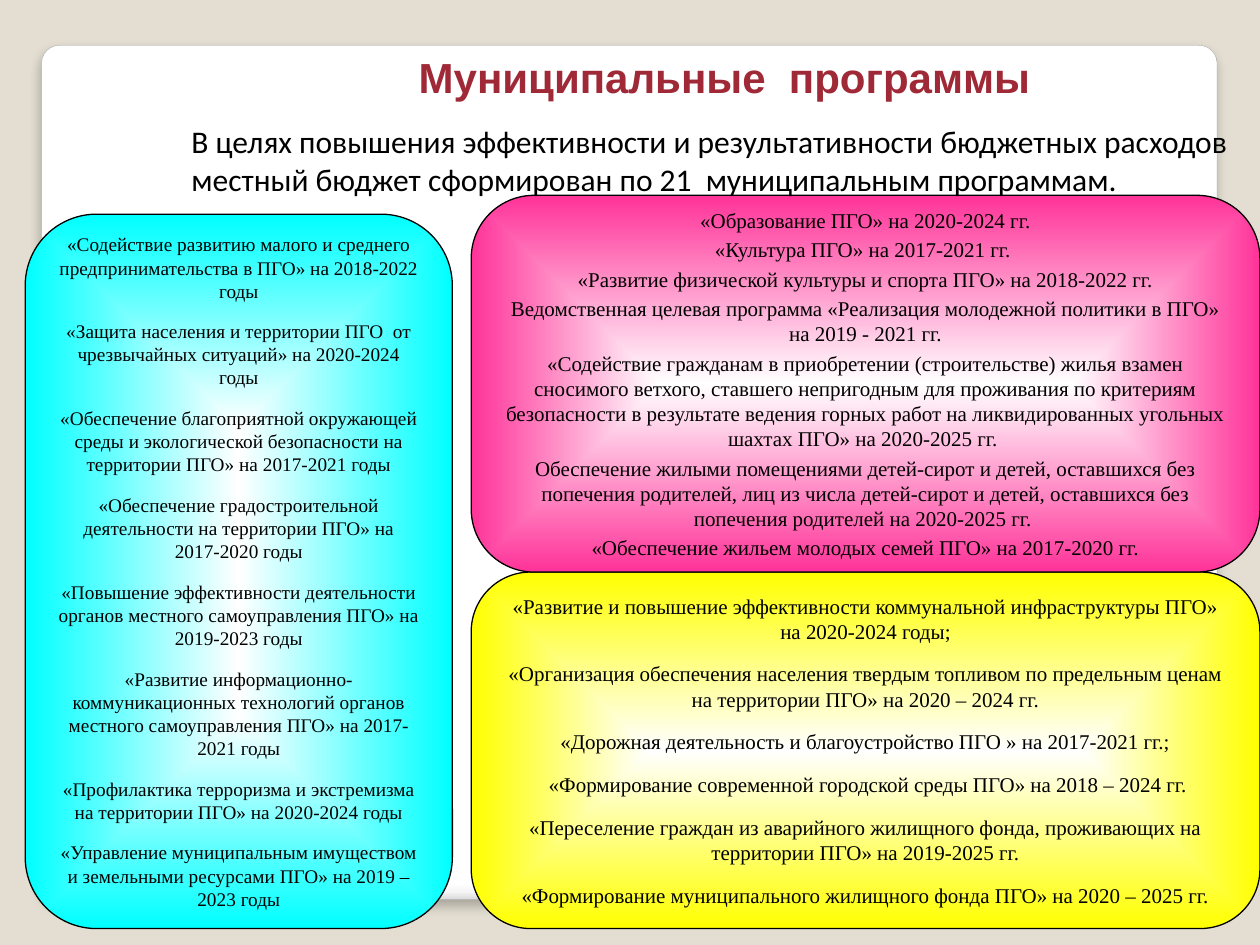
from dataclasses import dataclass

from lxml import etree
from pptx import Presentation
from pptx.dml.color import RGBColor
from pptx.enum import shapes, text
from pptx.oxml import parse_xml
from pptx.oxml.ns import nsdecls, qn
from pptx.util import Inches, Pt

COLOURS = {
    "background": "E3DED1", "white": "FFFFFF", "black": "000000",
    "card_line": "A4A4A4", "card_edge": "F7F7F7", "card_rim": "DADADA",
    "title": "9F2936", "yellow": "FFFF00", "pink": "FF3399", "cyan": "00FFFF",
}


@dataclass
class Box:
    left: float
    top: float
    width: float
    height: float


@dataclass
class Panel:
    box: Box
    colour: str
    size: float
    spacing: dict
    programs: list


def rgb(name: str) -> RGBColor:
    return RGBColor.from_string(COLOURS[name])


def lengths(box: Box) -> list:
    return [Inches(v) for v in (box.left, box.top, box.width, box.height)]


def set_values(target, values: dict) -> None:
    for name, value in values.items():
        setattr(target, name, value)


def set_gradient(shape, stops: list, direction: str) -> None:
    """Replace the fill with a gradient of (position in percent, colour) stops."""
    shape.fill.background()
    stop_xml = "".join(
        f'<a:gs pos="{position * 1000}"><a:srgbClr val="{COLOURS[colour]}"/></a:gs>'
        for position, colour in stops)
    gradient = parse_xml(f'<a:gradFill {nsdecls("a")} rotWithShape="1">'
                         f'<a:gsLst>{stop_xml}</a:gsLst>{direction}</a:gradFill>')
    properties = shape._element.spPr
    properties.replace(properties.find(qn("a:noFill")), gradient)


def add_rounded(slide, box: Box, corner: float, line: str, width: float):
    shape = slide.shapes.add_shape(shapes.MSO_SHAPE.ROUNDED_RECTANGLE, *lengths(box))
    shape.adjustments[0] = corner
    shape.shadow.inherit = False
    shape.line.color.rgb = rgb(line)
    shape.line.width = Pt(width)
    return shape


def write(frame, lines: list, font: dict, colour: str, paragraph_format: dict) -> None:
    for index, line in enumerate(lines):
        paragraph = frame.add_paragraph() if index else frame.paragraphs[0]
        set_values(paragraph, paragraph_format)
        run = paragraph.add_run()
        run.text = line
        set_values(run.font, font)
        run.font.color.rgb = rgb(colour)


def add_card(slide, box: Box) -> None:
    card = add_rounded(slide, box, 0.021, "card_line", 0.16)
    set_gradient(card, [(0, "white"), (98, "white"), (99, "card_edge"), (100, "card_rim")],
                 '<a:lin ang="5400000" scaled="0"/>')
    effects = card._element.spPr.find(qn("a:effectLst"))
    shadow = etree.SubElement(effects, qn("a:outerShdw"), blurRad=str(Pt(6)),
                              dist=str(Pt(4)), dir="5400000", rotWithShape="0")
    colour = etree.SubElement(shadow, qn("a:srgbClr"), val=COLOURS["black"])
    etree.SubElement(colour, qn("a:alpha"), val="25000")


def add_panel(slide, panel: Panel) -> None:
    shape = add_rounded(slide, panel.box, 0.167, "black", 0.75)
    set_gradient(shape, [(0, "white"), (100, panel.colour)],
                 '<a:path path="shape"><a:fillToRect l="50000" t="50000" '
                 'r="50000" b="50000"/></a:path>')
    set_values(shape.text_frame, {"word_wrap": True,
                                  "vertical_anchor": text.MSO_ANCHOR.MIDDLE})
    write(shape.text_frame, panel.programs,
          {"name": "Times New Roman", "size": Pt(panel.size)}, "black",
          {"alignment": text.PP_ALIGN.CENTER, **panel.spacing})


def add_text(slide, box: Box, line: str, font: dict, colour: str,
             alignment, wrap: bool) -> None:
    frame = slide.shapes.add_textbox(*lengths(box)).text_frame
    frame.word_wrap = wrap
    write(frame, [line], font, colour, {"alignment": alignment})


RIGHT, RIGHT_WIDTH = 3.74, 6.26
AFTER = {"space_after": Pt(10)}

ECONOMY = Panel(Box(RIGHT, 4.54, RIGHT_WIDTH, 2.83), "yellow", 12, AFTER, [
    "«Развитие и повышение эффективности коммунальной инфраструктуры ПГО» на 2020-2024 годы;",
    "«Организация обеспечения населения твердым топливом по предельным ценам на территории ПГО» "
    "на 2020 – 2024 гг.",
    "«Дорожная деятельность и благоустройство ПГО » на 2017-2021 гг.;",
    " «Формирование современной городской среды ПГО» на 2018 – 2024 гг.",
    "«Переселение граждан из аварийного жилищного фонда, проживающих на территории ПГО» "
    "на 2019-2025 гг.",
    "«Формирование муниципального жилищного фонда ПГО» на 2020 – 2025 гг.",
])
SOCIAL = Panel(Box(RIGHT, 1.55, RIGHT_WIDTH, 2.99), "pink", 12, {"space_before": Pt(2.4)}, [
    "«Образование ПГО» на 2020-2024 гг.",
    "«Культура ПГО» на 2017-2021 гг. ",
    "«Развитие физической культуры и спорта ПГО» на 2018-2022 гг.",
    "Ведомственная целевая программа «Реализация молодежной политики в ПГО» на 2019 - 2021 гг.",
    "«Содействие гражданам в приобретении (строительстве) жилья взамен сносимого ветхого, "
    "ставшего непригодным для проживания по критериям безопасности в результате ведения "
    "горных работ на ликвидированных угольных шахтах ПГО» на 2020-2025 гг. ",
    "Обеспечение жилыми помещениями детей-сирот и детей, оставшихся без попечения родителей, "
    "лиц из числа детей-сирот и детей, оставшихся без попечения родителей на 2020-2025 гг. ",
    "«Обеспечение жильем молодых семей ПГО» на 2017-2020 гг.",
])
GOVERNANCE = Panel(Box(0.2, 1.7, 3.39, 5.67), "cyan", 11, AFTER, [
    "«Содействие развитию малого и среднего предпринимательства в ПГО» на 2018-2022 годы",
    "«Защита населения и территории ПГО  от чрезвычайных ситуаций» на 2020-2024 годы",
    "«Обеспечение благоприятной окружающей среды и экологической безопасности "
    "на территории ПГО» на 2017-2021 годы",
    "«Обеспечение градостроительной деятельности на территории ПГО» на 2017-2020 годы",
    "«Повышение эффективности деятельности органов местного самоуправления ПГО» "
    "на 2019-2023 годы",
    "«Развитие информационно-коммуникационных технологий органов местного "
    "самоуправления ПГО» на 2017-2021 годы",
    "«Профилактика терроризма и экстремизма на территории ПГО» на 2020-2024 годы",
    "«Управление муниципальным имуществом и земельными ресурсами ПГО» на 2019 – 2023 годы",
])


def main() -> None:
    presentation = Presentation()
    set_values(presentation, {"slide_width": Inches(10), "slide_height": Inches(7.5)})
    slide = presentation.slides.add_slide(presentation.slide_layouts[6])
    slide.background.fill.solid()
    slide.background.fill.fore_color.rgb = rgb("background")

    # Backdrop card
    add_card(slide, Box(0.33, 0.36, 9.33, 6.78))

    # Right-hand panels, then the introduction and the left-hand panel
    for panel in (ECONOMY, SOCIAL):
        add_panel(slide, panel)
    add_text(slide, Box(1.42, 0.92, 8.58, 0.71),
             "В целях повышения эффективности и результативности бюджетных расходов "
             "местный бюджет сформирован по 21  муниципальным программам.",
             {"name": "Calibri", "size": Pt(18)}, "black", text.PP_ALIGN.LEFT, True)
    add_panel(slide, GOVERNANCE)

    # Title
    add_text(slide, Box(1.85, 0.36, 7.8, 0.47), "Муниципальные  программы",
             {"name": "Arial", "size": Pt(24), "bold": True}, "title",
             text.PP_ALIGN.CENTER, False)

    presentation.save("out.pptx")


if __name__ == "__main__":
    main()
